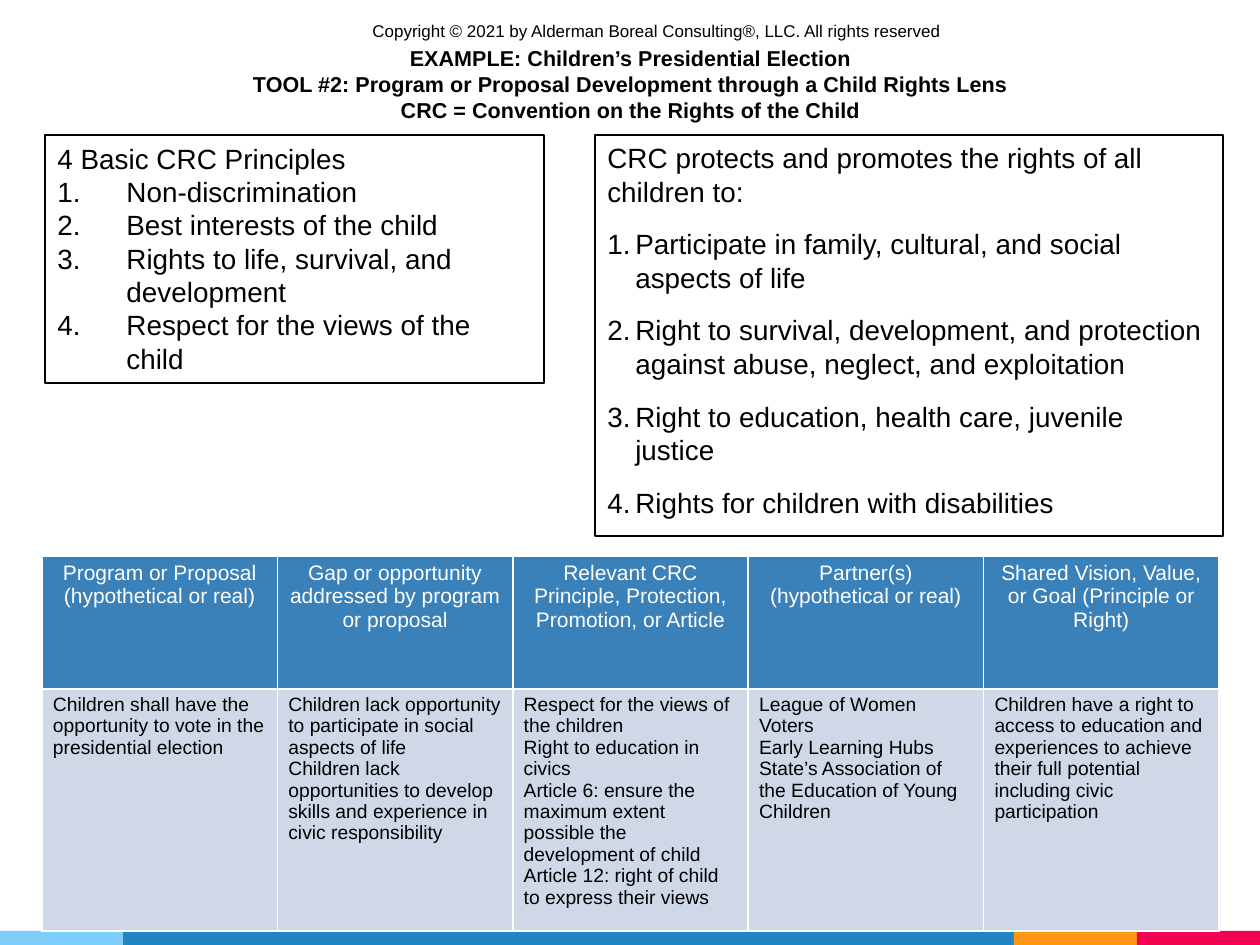
"""Build a slide on planning programs through a child rights lens."""
import dataclasses
import typing

import lxml.etree
import pptx
import pptx.dml.color
import pptx.enum.shapes
import pptx.enum.text
import pptx.oxml.ns
import pptx.util

RGB = pptx.dml.color.RGBColor
ALIGN = pptx.enum.text.PP_ALIGN
FIT = pptx.enum.text.MSO_AUTO_SIZE
RECT = pptx.enum.shapes.MSO_SHAPE.RECTANGLE
BLACK = RGB(0x00, 0x00, 0x00)
WHITE = RGB(0xFF, 0xFF, 0xFF)
SKY = RGB(0x7E, 0xCE, 0xFD)
BLUE = RGB(0x21, 0x85, 0xC5)
AMBER = RGB(0xFF, 0x97, 0x15)
ROSE = RGB(0xF2, 0x02, 0x53)
HEAD = RGB(0x3A, 0x81, 0xBA)
BODY = RGB(0xCE, 0xD8, 0xE7)
WIDE, HIGH = 1260, 945


def px(count: float) -> int:
    """Turn px into EMU at 126 px to the inch."""
    return round(count * 914400 / 126)


@dataclasses.dataclass
class Area:
    """A place on the slide in px."""
    left: int
    top: int
    width: int
    height: int

    def emu(self) -> list[int]:
        """Give the four lengths in EMU."""
        return [px(n) for n in dataclasses.astuple(self)]


@dataclasses.dataclass
class Style:
    """How a paragraph looks; a hang above zero numbers it."""
    size: float
    color: RGB = BLACK
    bold: bool = False
    align: ALIGN = ALIGN.LEFT
    before: int = 0
    hang: int = 0


@dataclasses.dataclass
class Panel:
    """A framed box with a lead line and numbered points."""
    area: Area
    lead: str
    points: list[str]
    style: Style
    hang: int
    fit: FIT


@dataclasses.dataclass
class Topic:
    """A table column: its heading and its entries."""
    head: list[str]
    body: list[str]


BANDS = [(0, 123, SKY), (123, 1014, BLUE), (1014, 1137, AMBER), (1137, WIDE, ROSE)]
TITLE = [
    "EXAMPLE: Children’s Presidential Election",
    "TOOL #2: Program or Proposal Development through a Child Rights Lens",
    "CRC = Convention on the Rights of the Child",
]
NOTICE = ["Copyright © 2021 by Alderman Boreal Consulting®, LLC. All rights reserved"]
PANELS = [
    Panel(Area(45, 135, 499, 248), "4 Basic CRC Principles", [
        "Non-discrimination",
        "Best interests of the child",
        "Rights to life, survival, and development",
        "Respect for the views of the child",
    ], Style(15.9), 69, FIT.SHAPE_TO_FIT_TEXT),
    Panel(Area(595, 135, 628, 401), "CRC protects and promotes the rights of all children to:", [
        "Participate in family, cultural, and social aspects of life",
        "Right to survival, development, and protection against abuse, neglect, and exploitation",
        "Right to education, health care, juvenile justice",
        "Rights for children with disabilities",
    ], Style(15.9, before=11), 28, FIT.NONE),
]
TOPICS = [
    Topic(["Program or Proposal (hypothetical or real)"],
          ["Children shall have the opportunity to vote in the presidential election"]),
    Topic(["Gap or opportunity addressed by program or proposal"],
          ["Children lack opportunity to participate in social aspects of life",
           "Children lack opportunities to develop skills and experience in civic responsibility"]),
    Topic(["Relevant CRC Principle, Protection, Promotion, or Article"],
          ["Respect for the views of the children",
           "Right to education in civics",
           "Article 6: ensure the maximum extent possible the development of child",
           "Article 12: right of child to express their views"]),
    Topic(["Partner(s)", "(hypothetical or real)"],
          ["League of Women Voters",
           "Early Learning Hubs",
           "State’s Association of the Education of Young Children"]),
    Topic(["Shared Vision, Value, or Goal (Principle or Right)"],
          ["Children have a right to access to education and experiences to achieve "
           "their full potential including civic participation"]),
]


def write(frame: typing.Any, lines: list[str], styles: list[Style]) -> None:
    """Fill a text frame, one style to a line."""
    for i, (line, style) in enumerate(zip(lines, styles)):
        para = frame.add_paragraph() if i else frame.paragraphs[0]
        para.text = line
        para.alignment = style.align
        para.space_before = pptx.util.Pt(style.before)
        if style.hang:
            props = para._p.get_or_add_pPr()
            props.set("marL", str(px(style.hang)))
            props.set("indent", str(-px(style.hang)))
            lxml.etree.SubElement(props, pptx.oxml.ns.qn("a:buAutoNum"), type="arabicPeriod")
        font = para.font
        font.name, font.size, font.bold = "Arial", pptx.util.Pt(style.size), style.bold
        font.color.rgb = style.color


def draw_band(slide: typing.Any, left: int, right: int, color: RGB) -> None:
    """Draw one part of the bottom stripe."""
    shape = slide.shapes.add_shape(RECT, *Area(left, 931, right - left, HIGH - 931).emu())
    shape.shadow.inherit = False
    shape.fill.solid()
    shape.fill.fore_color.rgb = color
    shape.line.fill.background()


def draw_text(slide: typing.Any, area: Area, lines: list[str], style: Style) -> None:
    """Draw a text box that does not wrap."""
    frame = slide.shapes.add_textbox(*area.emu()).text_frame
    frame.word_wrap = False
    frame.auto_size = FIT.SHAPE_TO_FIT_TEXT
    write(frame, lines, [style] * len(lines))


def draw_panel(slide: typing.Any, panel: Panel) -> None:
    """Draw a framed box of numbered points."""
    shape = slide.shapes.add_shape(RECT, *panel.area.emu())
    shape.shadow.inherit = False
    shape.fill.background()
    shape.line.color.rgb = BLACK
    shape.line.width = pptx.util.Pt(0.75)
    frame = shape.text_frame
    frame.word_wrap = True
    frame.auto_size = panel.fit
    frame.vertical_anchor = pptx.enum.text.MSO_ANCHOR.TOP
    point = dataclasses.replace(panel.style, hang=panel.hang)
    write(frame, [panel.lead, *panel.points], [panel.style] + [point] * len(panel.points))


def draw_cell(cell: typing.Any, lines: list[str], style: Style, fill: RGB) -> None:
    """Fill a table cell and rule its sides in white."""
    cell.margin_left = cell.margin_right = px(11)
    cell.margin_top = cell.margin_bottom = px(5)
    cell.fill.solid()
    cell.fill.fore_color.rgb = fill
    props = cell._tc.get_or_add_tcPr()
    for i, side in enumerate(("lnL", "lnR", "lnT", "lnB")):
        rule = lxml.etree.Element(pptx.oxml.ns.qn(f"a:{side}"), w=str(pptx.util.Pt(1)))
        solid = lxml.etree.SubElement(rule, pptx.oxml.ns.qn("a:solidFill"))
        lxml.etree.SubElement(solid, pptx.oxml.ns.qn("a:srgbClr"), val=str(WHITE))
        props.insert(i, rule)
    write(cell.text_frame, lines, [style] * len(lines))


def draw_table(slide: typing.Any, area: Area, topics: list[Topic]) -> None:
    """Draw the table of topics."""
    table = slide.shapes.add_table(2, len(topics), *area.emu()).table
    table.first_row = table.horz_banding = False
    table.rows[0].height, table.rows[1].height = px(133), px(area.height - 133)
    for i, topic in enumerate(topics):
        draw_cell(table.cell(0, i), topic.head, Style(12, WHITE, align=ALIGN.CENTER), HEAD)
        draw_cell(table.cell(1, i), topic.body, Style(11), BODY)


def main() -> None:
    """Build and save the slide."""
    deck = pptx.Presentation()
    deck.slide_width, deck.slide_height = px(WIDE), px(HIGH)
    slide = deck.slides.add_slide(deck.slide_layouts[6])
    for band in BANDS:
        draw_band(slide, *band)
    draw_text(slide, Area(238, 39, 785, 91), TITLE, Style(12.3, bold=True, align=ALIGN.CENTER))
    for panel in PANELS:
        draw_panel(slide, panel)
    draw_table(slide, Area(42, 556, 1177, 375), TOPICS)
    draw_text(slide, Area(360, 14, 601, 33), NOTICE, Style(9.7))
    deck.save("out.pptx")


if __name__ == "__main__":
    main()
